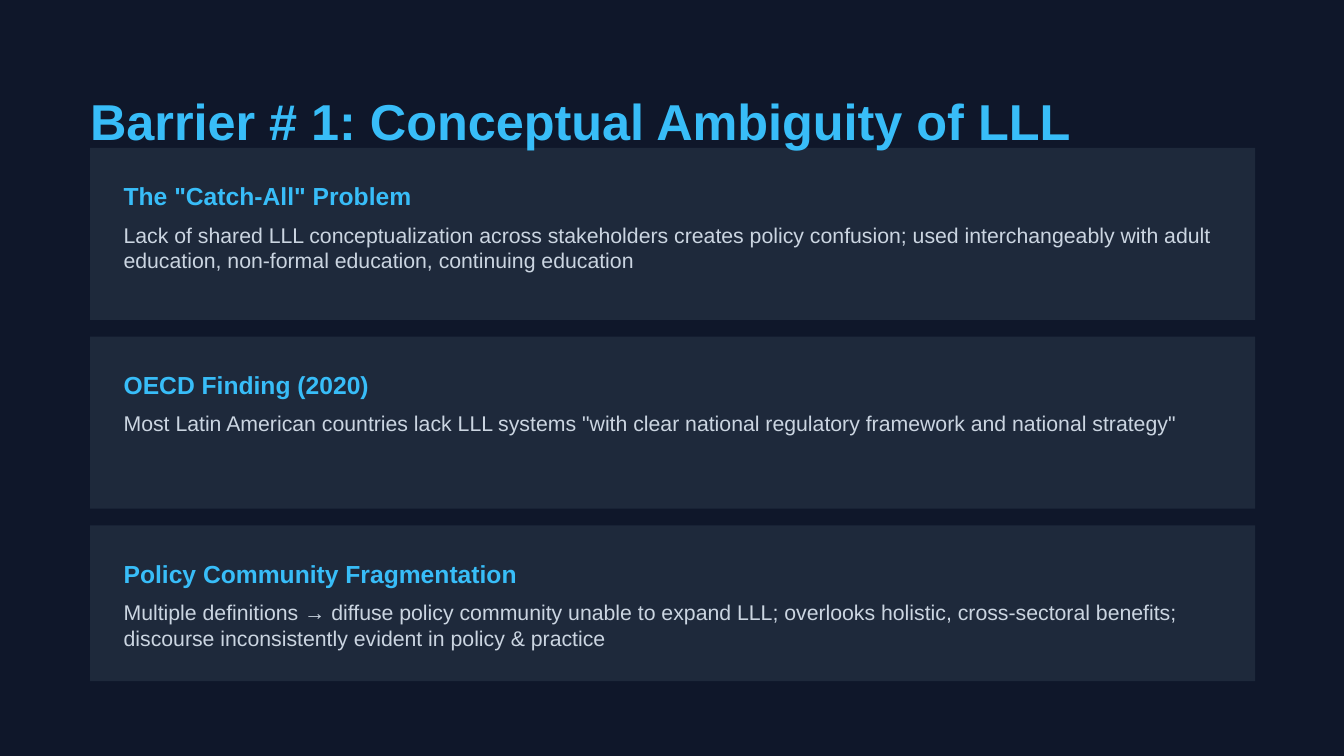
"""Build the slide on the conceptual ambiguity of lifelong learning."""
from pptx import Presentation
from pptx.dml.color import RGBColor
from pptx.enum.shapes import MSO_SHAPE
from pptx.util import Inches, Pt

RECTANGLE = MSO_SHAPE.RECTANGLE
NAVY, SLATE, SKY, PALE = "0F172A", "1E293B", "38BDF8", "CBD5E1"
LEFT, WIDTH = 0.67, 8.67
FIRST_TOP, LAST_TOP = 1.1, 3.91

cards = [
    (1.28, 'The "Catch-All" Problem',
     "Lack of shared LLL conceptualization across stakeholders creates policy "
     "confusion; used interchangeably with adult education, non-formal "
     "education, continuing education"),
    (1.28, "OECD Finding (2020)",
     'Most Latin American countries lack LLL systems "with clear national '
     'regulatory framework and national strategy"'),
    (1.16, "Policy Community Fragmentation",
     "Multiple definitions → diffuse policy community unable to expand LLL; "
     "overlooks holistic, cross-sectoral benefits; discourse inconsistently "
     "evident in policy & practice"),
]


def color(value):
    return RGBColor.from_string(value)


def add_text(text, left, top, width, height, size, spacing, ink, bold):
    box = slide.shapes.add_textbox(Inches(left), Inches(top), Inches(width), Inches(height))
    frame = box.text_frame
    frame.word_wrap = True
    frame.margin_left = frame.margin_right = frame.margin_top = frame.margin_bottom = 0
    para = frame.paragraphs[0]
    para.line_spacing = Pt(spacing)
    span = para.add_run()
    span.text = text
    span.font.name = "Arial"
    span.font.size = Pt(size)
    span.font.bold = bold
    span.font.color.rgb = color(ink)


deck = Presentation()
deck.slide_width = Inches(10)
deck.slide_height = Inches(10 * 9 / 16)
slide = deck.slides.add_slide(deck.slide_layouts[6])
slide.background.fill.solid()
slide.background.fill.fore_color.rgb = color(NAVY)

pitch = (LAST_TOP - FIRST_TOP) / (len(cards) - 1)
tops = [FIRST_TOP + index * pitch for index in range(len(cards))]

for top, (height, heading, body) in zip(tops, cards):
    panel = slide.shapes.add_shape(
        RECTANGLE, Inches(LEFT), Inches(top), Inches(WIDTH), Inches(height))
    panel.shadow.inherit = False
    panel.fill.solid()
    panel.fill.fore_color.rgb = color(SLATE)
    panel.line.fill.background()

add_text("Barrier # 1: Conceptual Ambiguity of LLL",
         LEFT, 0.67, WIDTH, 0.56, 27, 32.4, SKY, True)

for top, (height, heading, body) in zip(tops, cards):
    add_text(heading, LEFT + 0.25, top + 0.25, 8.33, 0.22, 13.2, 15.8, SKY, True)
    add_text(body, LEFT + 0.25, top + 0.55, 8.17, 0.35, 11.4, 13.7, PALE, False)

deck.save("out.pptx")
